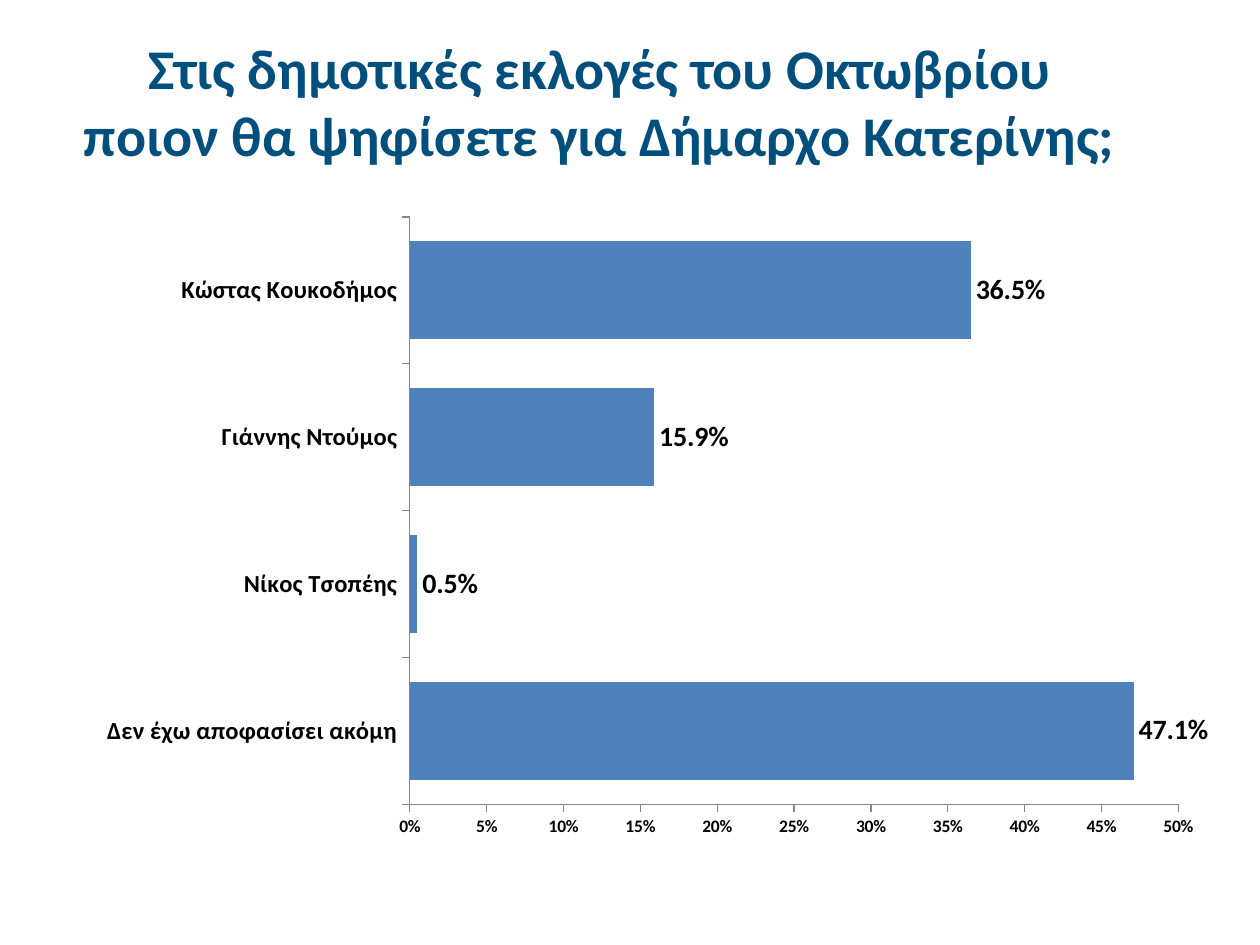
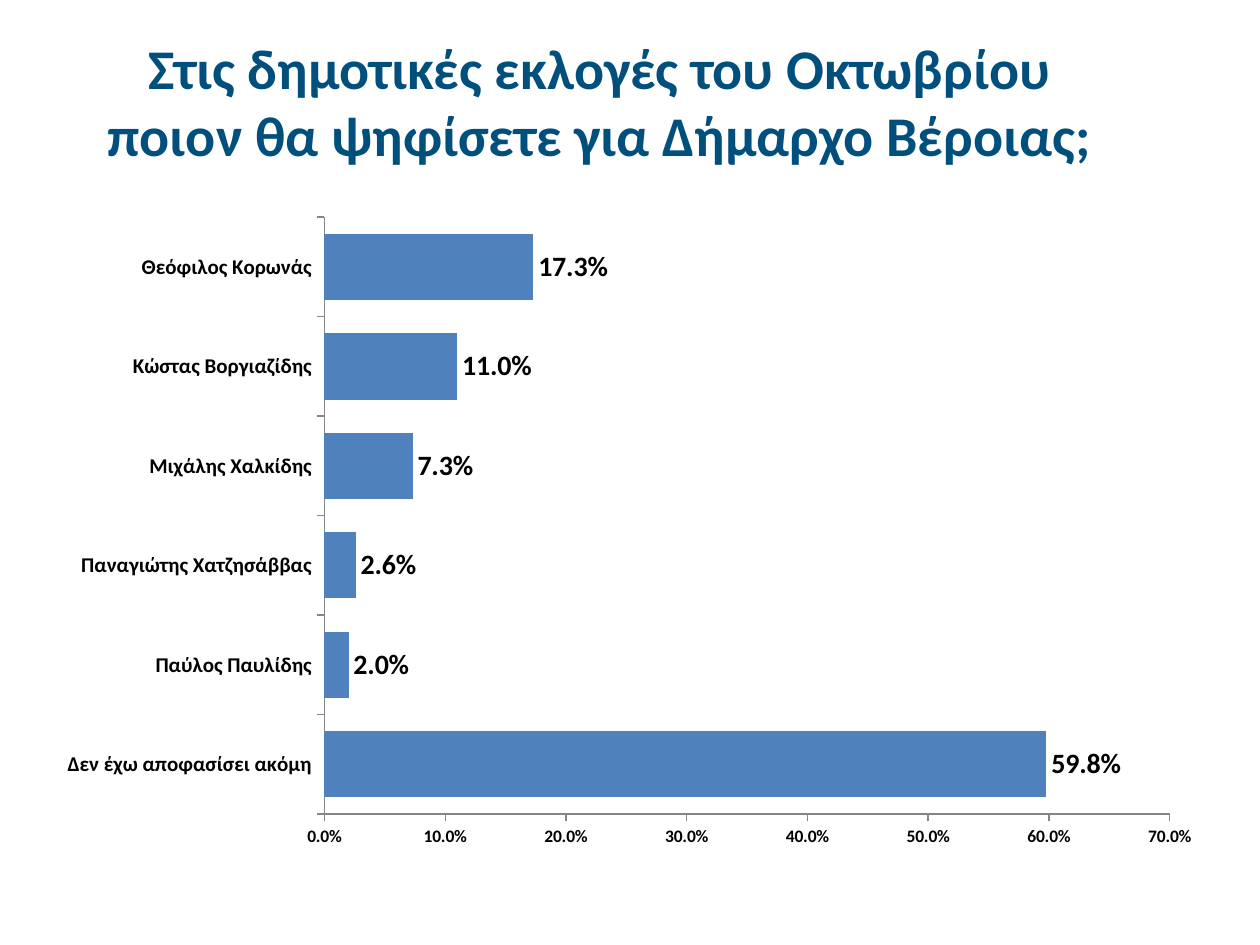
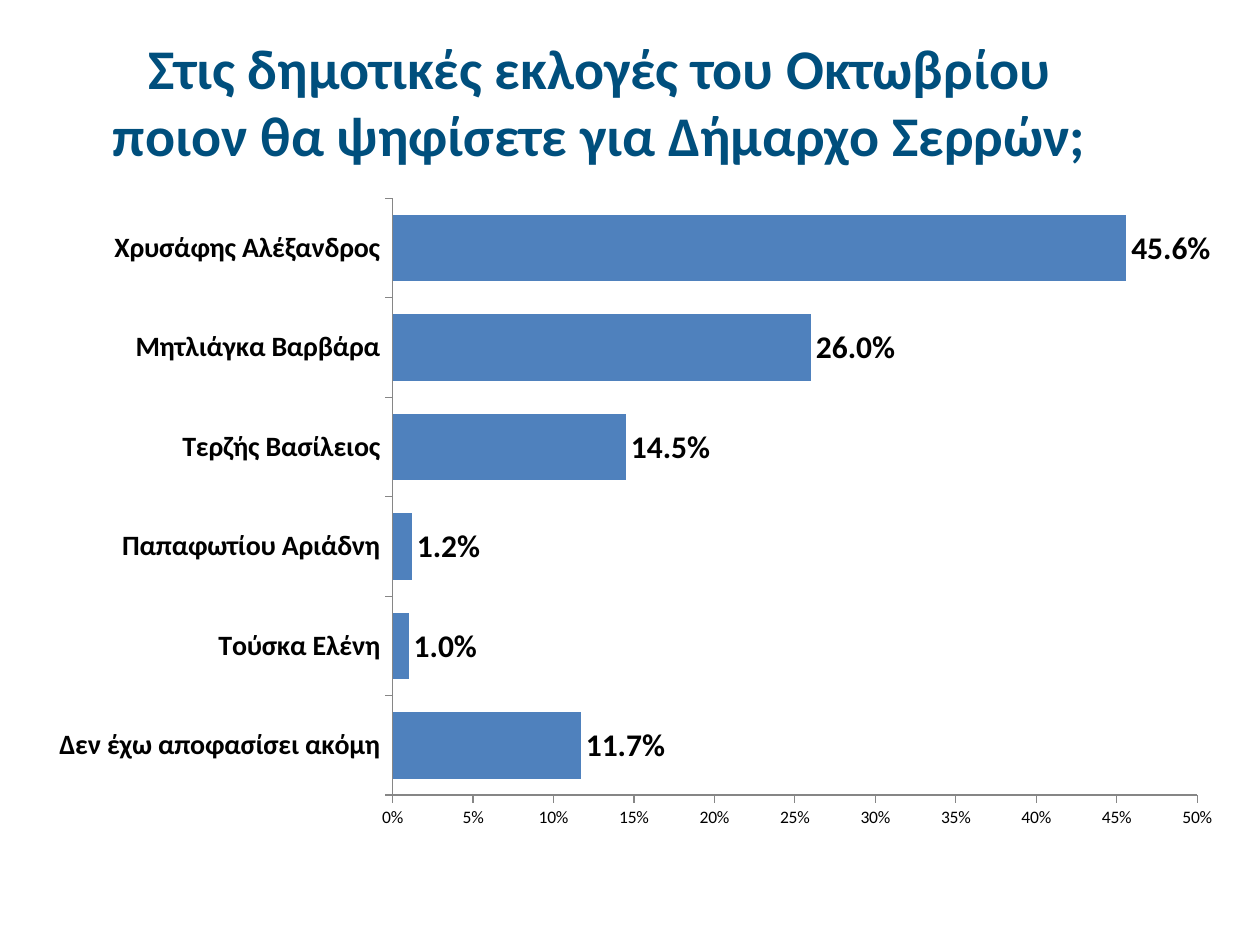
from pptx import Presentation
from pptx.chart.data import CategoryChartData
from pptx.dml.color import RGBColor
from pptx.enum.chart import XL_CHART_TYPE as ChartType, XL_LABEL_POSITION as LabelPosition
from pptx.enum.chart import XL_TICK_MARK as TickMark
from pptx.enum.text import MSO_ANCHOR as Anchor, PP_ALIGN as Align
from pptx.util import Emu, Pt

PX = 9144  # 100 px to the inch
UNDECIDED = "Δεν έχω αποφασίσει ακόμη"


def px(*lengths):
    return [Emu(length * PX) for length in lengths]


def color(hex_string):
    return RGBColor.from_string(hex_string)


def set_font(font, size, hex_string, bold=False):
    font.name = "Calibri"
    font.size = Pt(size)
    font.bold = bold
    font.color.rgb = color(hex_string)


def write(frame, text, size, hex_string, bold=False, align=Align.LEFT):
    para = frame.paragraphs[0]
    para.alignment = align
    span = para.add_run()
    span.text = text
    set_font(span.font, size, hex_string, bold)


class PollDeck:
    TITLE = "004F7D"
    BAR = "4F81BD"
    AXIS = "868686"
    TEXT = "000000"

    def __init__(self):
        self.deck = Presentation()
        self.deck.slide_width, self.deck.slide_height = px(1000, 750)
        self.slide = None

    def add_slide(self):
        self.slide = self.deck.slides.add_slide(self.deck.slide_layouts[6])

    def add_title(self, city):
        box = self.slide.shapes.add_textbox(*px(51, 21, 850, 118))
        frame = box.text_frame
        frame.word_wrap = True
        frame.vertical_anchor = Anchor.MIDDLE
        question = f"Στις δημοτικές εκλογές του Οκτωβρίου ποιον θα ψηφίσετε για Δήμαρχο {city};"
        write(frame, question, 32, self.TITLE, bold=True, align=Align.CENTER)

    def style_axis(self, axis, size, bold):
        axis.has_major_gridlines = False
        axis.major_tick_mark = TickMark.OUTSIDE
        axis.minor_tick_mark = TickMark.NONE
        axis.format.line.color.rgb = color(self.AXIS)
        axis.format.line.width = Pt(0.75)
        set_font(axis.tick_labels.font, size, self.TEXT, bold)

    def add_bars(self, place, votes, top, step, name_size, label_size,
                 scale_format="0%", scale_bold=False):
        data = CategoryChartData(number_format="0.0%")
        data.categories = list(votes)
        data.add_series("Series 1", list(votes.values()))
        holder = self.slide.shapes.add_chart(ChartType.BAR_CLUSTERED, *px(*place), data)
        chart = holder.chart
        chart.has_title = chart.has_legend = False
        set_font(chart.font, 10, self.TEXT)

        # Axes
        self.style_axis(chart.category_axis, name_size, True)
        scale = chart.value_axis
        self.style_axis(scale, 10, scale_bold)
        scale.minimum_scale, scale.maximum_scale, scale.major_unit = 0, top, step
        scale.tick_labels.number_format = scale_format
        scale.tick_labels.number_format_is_linked = False

        # Bars and their labels
        plot = chart.plots[0]
        plot.gap_width = 50
        plot.vary_by_categories = False
        fill = plot.series[0].format.fill
        fill.solid()
        fill.fore_color.rgb = color(self.BAR)
        labels = plot.series[0].data_labels
        labels.show_value = True
        labels.position = LabelPosition.OUTSIDE_END
        labels.number_format = "0.0%"
        labels.number_format_is_linked = False
        set_font(labels.font, label_size, self.TEXT, bold=True)


# Each poll: the city, then the chart's settings; votes run from the lowest bar up
POLLS = [
    ("Κατερίνης", dict(
        place=(67, 162, 898, 512), top=0.5, step=0.05,
        name_size=14, label_size=16, scale_bold=True,
        votes={UNDECIDED: 0.471, "Νίκος Τσοπέης": 0.005,
               "Γιάννης Ντούμος": 0.159, "Κώστας Κουκοδήμος": 0.365})),
    ("Βέροιας", dict(
        place=(35, 162, 929, 520), top=0.7, step=0.1,
        name_size=12, label_size=16, scale_format="0.0%", scale_bold=True,
        votes={UNDECIDED: 0.598, "Παύλος Παυλίδης": 0.02,
               "Παναγιώτης Χατζησάββας": 0.026, "Μιχάλης Χαλκίδης": 0.073,
               "Κώστας Βοργιαζίδης": 0.11, "Θεόφιλος Κορωνάς": 0.173})),
    ("Σερρών", dict(
        place=(28, 147, 953, 520), top=0.5, step=0.05,
        name_size=16, label_size=18,
        votes={UNDECIDED: 0.117, "Τούσκα Ελένη": 0.01,
               "Παπαφωτίου Αριάδνη": 0.012, "Τερζής Βασίλειος": 0.145,
               "Μητλιάγκα Βαρβάρα": 0.26, "Χρυσάφης Αλέξανδρος": 0.456})),
]


def main():
    poll_deck = PollDeck()
    for city, settings in POLLS:
        poll_deck.add_slide()
        poll_deck.add_title(city)
        poll_deck.add_bars(**settings)
    poll_deck.deck.save("out.pptx")


if __name__ == "__main__":
    main()
